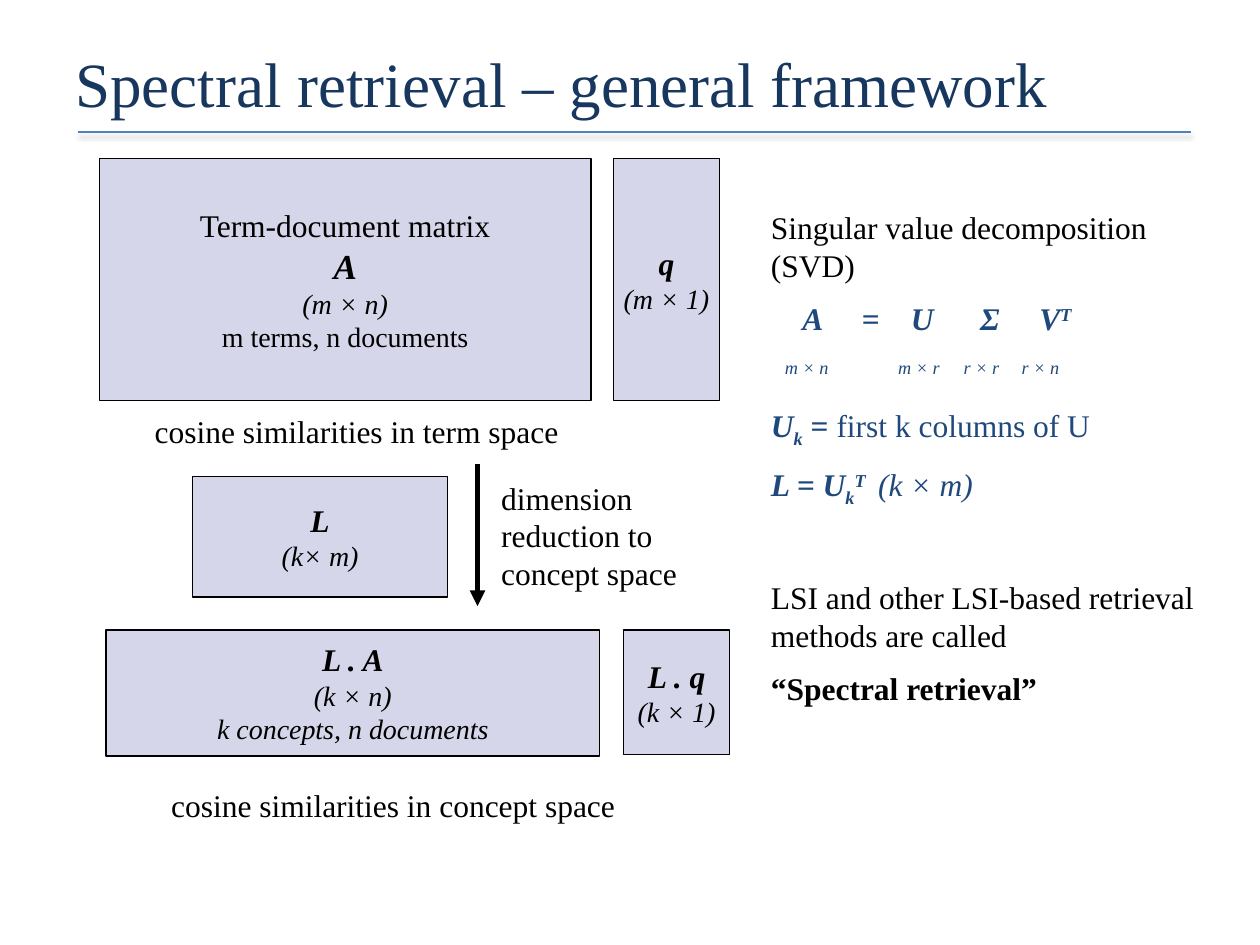
from lxml import etree
from pptx import Presentation
from pptx.dml.color import RGBColor
from pptx.enum.shapes import MSO_CONNECTOR as CONN, MSO_SHAPE as SHAPE
from pptx.enum.text import MSO_ANCHOR as ANCHOR, PP_ALIGN as ALIGN
from pptx.oxml.ns import qn
from pptx.util import Inches, Pt

FONT = "Times New Roman"
BLACK = RGBColor(0, 0, 0)
NAVY = RGBColor(0x17, 0x37, 0x5E)
BLUE = RGBColor(0x1F, 0x49, 0x7D)
RULE_BLUE = RGBColor(0x4F, 0x81, 0xBD)
INDIGO = RGBColor(0x33, 0x33, 0x99)

# Paragraph: (runs, options); run: (text, style letters)
# Style letters: b bold, i italic, ^ superscript, _ subscript
TITLE = [([("Spectral retrieval – general framework", "")],
          dict(size=36, color=NAVY))]

# Matrix: (left, top, width, height), lines of (text, size, style)
MATRICES = [
    ((0.79, 1.26, 3.9, 1.92), [("Term-document matrix", 18, ""), ("A", 20, "bi"),
                               ("(m × n)", 16, "i"),
                               ("m terms, n documents", 16, "")]),
    ((4.87, 1.26, 0.84, 1.92), [("q", 18, "bi"), ("(m × 1)", 16, "i")]),
    ((1.53, 3.78, 2.02, 0.96), [("L", 18, "bi"), ("(k× m)", 16, "i")]),
    ((0.84, 5, 3.92, 1), [("L . A", 18, "bi"), ("(k × n)", 16, "i"),
                          ("k concepts, n documents", 16, "i")]),
    ((4.95, 5, 0.84, 0.99), [("L . q", 18, "bi"), ("(k × 1)", 16, "i")]),
]

CAPTIONS = [
    ((1.13, 3.22, 4.17, 0.4), "cosine similarities in term space"),
    ((3.88, 3.75, 2.04, 1), "dimension reduction to concept space"),
    ((1.26, 6.19, 4.17, 0.4), "cosine similarities in concept space"),
]

SVD_NOTES = [
    ([("Singular value decomposition (SVD)", "")], {}),
    ([("\tA\t=\tU\tΣ\tV", "bi"), ("T", "bi^")],
     dict(color=BLUE, before=9, tabs=(0.25, 0.72, 1.11, 1.66, 2.13))),
    ([("\tm × n\tm × r\tr × r\tr × n", "i^")],
     dict(color=BLUE, before=9, tabs=(0.11, 1.01, 1.53, 1.99))),
    ([("U", "bi"), ("k", "bi_"), (" = ", "b"), ("first k columns of U", "")],
     dict(color=BLUE, before=9)),
    ([("L = U", "bi"), ("k", "bi_"), ("T ", "bi^"), (" (k × m)", "i")],
     dict(color=BLUE, before=9)),
    ([("LSI and other LSI-based retrieval methods are called", "")],
     dict(before=40)),
    ([("“Spectral retrieval”", "b")], dict(before=9)),
]


def add_paragraph(p, runs, size=18, color=BLACK, before=0, tabs=(), align=ALIGN.LEFT):
    p.alignment = align
    p.space_before = Pt(before)
    p.font.name, p.font.size = FONT, Pt(size)
    p.font.color.rgb = color
    if tabs:
        tab_list = etree.Element(qn("a:tabLst"))
        for pos in tabs:
            etree.SubElement(tab_list, qn("a:tab"), pos=str(Inches(pos)), algn="l")
        p._p.get_or_add_pPr().find(qn("a:defRPr")).addprevious(tab_list)
    for text, style in runs:
        r = p.add_run()
        r.text = text
        r.font.bold, r.font.italic = "b" in style, "i" in style
        if "^" in style or "_" in style:
            r.font._element.set("baseline", "30000" if "^" in style else "-25000")


def fill_text(sp, paragraphs, anchor=ANCHOR.TOP, wrap=True):
    tf = sp.text_frame
    tf.word_wrap = wrap
    tf.vertical_anchor = anchor
    for i, (runs, options) in enumerate(paragraphs):
        add_paragraph(tf.add_paragraph() if i else tf.paragraphs[0], runs, **options)


def add_text(s, box, paragraphs, anchor=ANCHOR.TOP):
    fill_text(s.shapes.add_textbox(*map(Inches, box)), paragraphs, anchor)


def add_matrix(s, box, lines):
    sp = s.shapes.add_shape(SHAPE.RECTANGLE, *map(Inches, box))
    sp.shadow.inherit = False
    sp.fill.solid()
    sp.fill.fore_color.rgb = INDIGO
    color = sp._element.spPr.find(qn("a:solidFill"))[0]
    etree.SubElement(color, qn("a:alpha"), val="20000")
    sp.line.color.rgb = BLACK
    sp.line.width = Pt(0.75)
    paragraphs = [([(text, style)], dict(size=size, align=ALIGN.CENTER))
                  for text, size, style in lines]
    fill_text(sp, paragraphs, ANCHOR.MIDDLE, wrap=False)


def add_line(s, ends, color, width):
    """Add a straight line and return it with its empty effect list."""
    line = s.shapes.add_connector(CONN.STRAIGHT, *map(Inches, ends))
    line.line.color.rgb = color
    line.line.width = Pt(width)
    return line, etree.SubElement(line._element.spPr, qn("a:effectLst"))


def add_title_rule(s):
    _, effects = add_line(s, (0.62, 1.05, 9.45, 1.05), RULE_BLUE, 1)
    shadow = etree.SubElement(effects, qn("a:outerShdw"), blurRad=str(Pt(3.1)),
                              dist=str(Pt(1.6)), dir="5400000", rotWithShape="0")
    color = etree.SubElement(shadow, qn("a:srgbClr"), val=str(BLACK))
    etree.SubElement(color, qn("a:alpha"), val="38000")


def add_reduction_arrow(s):
    arrow, _ = add_line(s, (3.79, 3.68, 3.79, 4.81), BLACK, 3)
    etree.SubElement(arrow.line._get_or_add_ln(), qn("a:tailEnd"), type="triangle")


def main():
    prs = Presentation()
    prs.slide_width, prs.slide_height = Inches(10), Inches(7.5)
    s = prs.slides.add_slide(prs.slide_layouts[6])
    add_title_rule(s)
    add_text(s, (0.5, 0.3, 9, 0.71), TITLE, ANCHOR.MIDDLE)
    for box, lines in MATRICES:
        add_matrix(s, box, lines)
    add_reduction_arrow(s)
    for box, text in CAPTIONS:
        add_text(s, box, [([(text, "")], {})])
    add_text(s, (6.02, 1.6, 3.71, 4.16), SVD_NOTES)
    prs.save("out.pptx")


if __name__ == "__main__":
    main()
